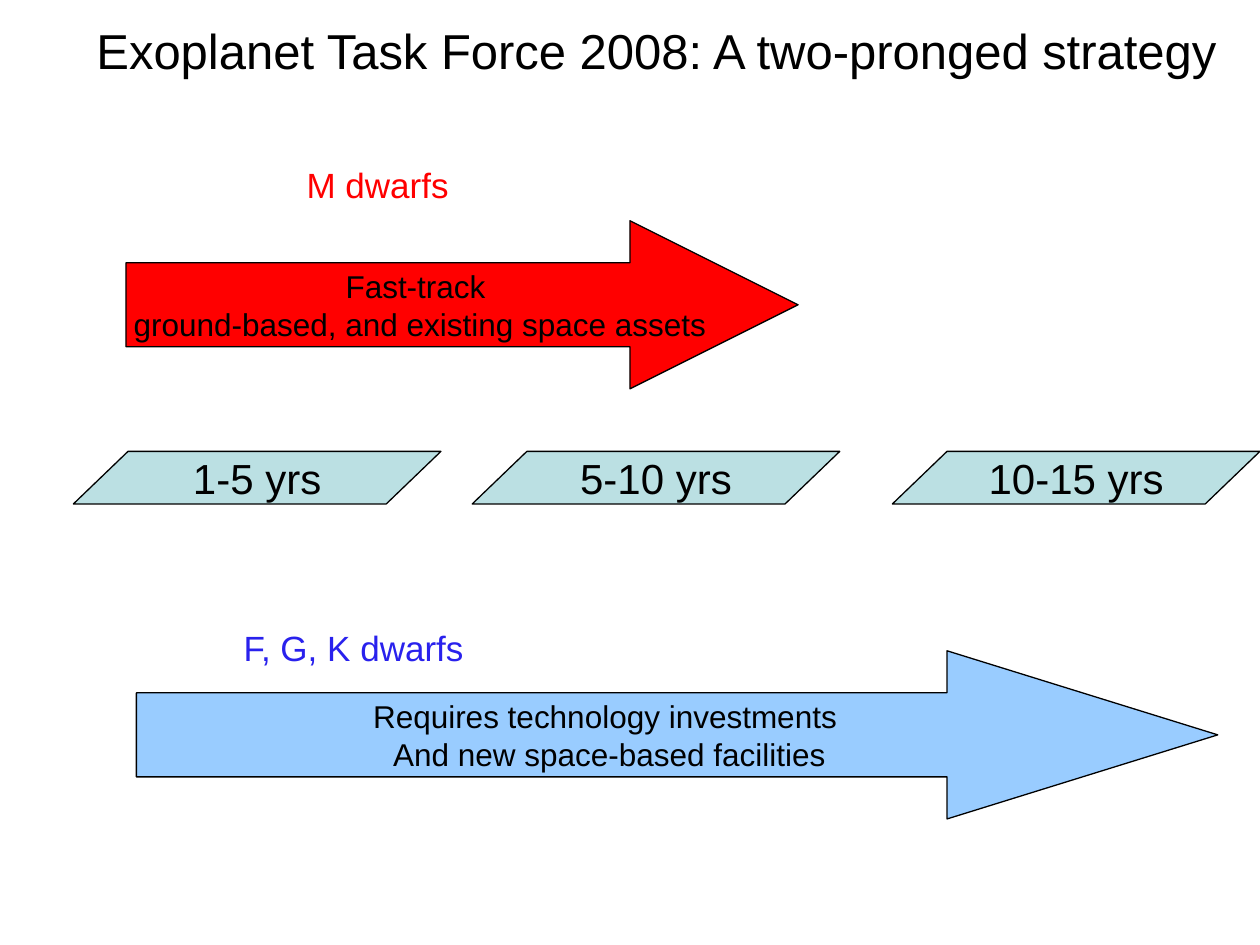
import pptx
import pptx.dml.color
import pptx.enum.shapes
import pptx.enum.text
import pptx.util
from pptx.dml.color import RGBColor
from pptx.util import Cm

BLACK = RGBColor(0x00, 0x00, 0x00)
RED = RGBColor(0xFF, 0x00, 0x00)
BLUE = RGBColor(0x29, 0x21, 0xED)
LIGHT_BLUE = RGBColor(0x99, 0xCC, 0xFF)
TEAL = RGBColor(0xBB, 0xE0, 0xE3)

ALIGN = pptx.enum.text.PP_ALIGN
ANCHOR = pptx.enum.text.MSO_ANCHOR
SHAPE = pptx.enum.shapes.MSO_SHAPE


def write_text(shape, lines, size, color, alignment, anchor, wrap=False):
    """Fill a shape with one paragraph per line."""
    frame = shape.text_frame
    frame.text = "\n".join(lines)
    frame.word_wrap = wrap
    frame.auto_size = pptx.enum.text.MSO_AUTO_SIZE.NONE
    frame.vertical_anchor = anchor
    for paragraph in frame.paragraphs:
        paragraph.alignment = alignment
        paragraph.font.name = "Arial"
        paragraph.font.size = pptx.util.Pt(size)
        paragraph.font.color.rgb = color


def set_title(slide, text):
    title = slide.shapes.title
    title.left, title.top = Cm(1.69), Cm(0.28)
    title.width, title.height = Cm(23.11), Cm(1.45)
    write_text(title, [text], 28, BLACK, ALIGN.LEFT, ANCHOR.TOP)


def add_label(slide, text, left, top, width, color):
    box = slide.shapes.add_textbox(Cm(left), Cm(top), Cm(width), Cm(1.1))
    write_text(box, [text], 20, color, ALIGN.LEFT, ANCHOR.TOP, wrap=True)


def add_block(slide, kind, position, adjustments, fill, lines, size):
    """Add an outlined preset shape with centred text."""
    shape = slide.shapes.add_shape(kind, *(Cm(value) for value in position))
    for index, value in enumerate(adjustments):
        shape.adjustments[index] = value
    shape.shadow.inherit = False
    shape.fill.solid()
    shape.fill.fore_color.rgb = fill
    shape.line.color.rgb = BLACK
    shape.line.width = pptx.util.Pt(0.75)
    write_text(shape, lines, size, BLACK, ALIGN.CENTER, ANCHOR.MIDDLE)


def main():
    presentation = pptx.Presentation()
    presentation.slide_width, presentation.slide_height = Cm(25.4), Cm(19.05)
    slide = presentation.slides.add_slide(presentation.slide_layouts[5])

    set_title(slide, "Exoplanet Task Force 2008: A two-pronged strategy")

    # Timeline
    periods = [("1-5 yrs", 1.48), ("5-10 yrs", 9.52), ("10-15 yrs", 17.99)]
    for period, left in periods:
        add_block(slide, SHAPE.PARALLELOGRAM, (left, 9.1, 7.41, 1.06),
                  [1.04], TEAL, [period], 24)

    # Target stars
    add_label(slide, "M dwarfs", 5.93, 3.18, 4.65, RED)
    add_label(slide, "F, G, K dwarfs", 4.66, 12.5, 11.64, BLUE)

    # Strategy arrows
    add_block(slide, SHAPE.RIGHT_ARROW, (2.54, 4.45, 13.55, 3.39), [0.5, 1], RED,
              ["Fast-track ", "ground-based, and existing space assets"], 18)
    add_block(slide, SHAPE.RIGHT_ARROW, (2.75, 13.12, 21.8, 3.39), [0.5, 1.61], LIGHT_BLUE,
              ["Requires technology investments ", "And new space-based facilities"], 18)

    presentation.save("out.pptx")


if __name__ == "__main__":
    main()
